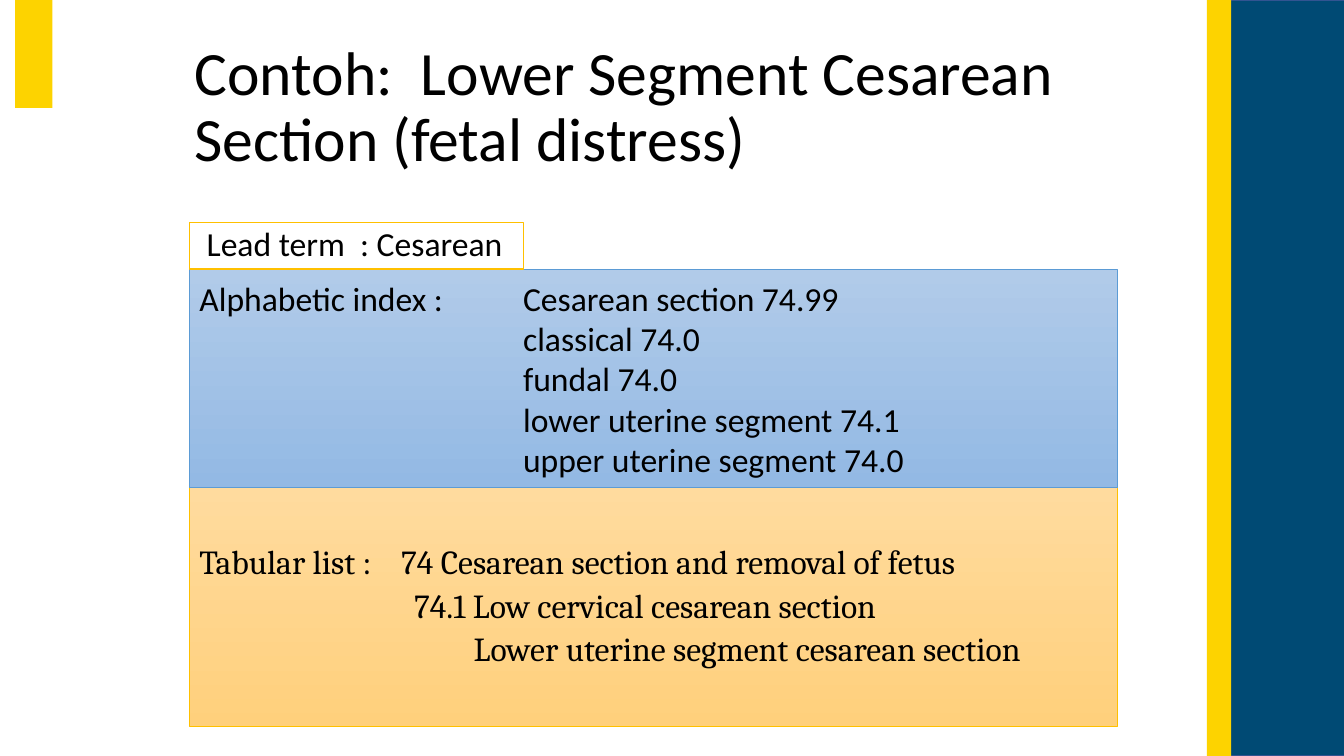
from dataclasses import dataclass
from typing import Optional

import pptx
import pptx.dml.color
import pptx.enum.shapes
import pptx.enum.text
import pptx.util

Inches = pptx.util.Inches
Pt = pptx.util.Pt
RGBColor = pptx.dml.color.RGBColor

YELLOW = RGBColor(0xFD, 0xD3, 0x00)
NAVY = RGBColor(0x00, 0x4A, 0x74)
NAVY_EDGE = RGBColor(0x32, 0x54, 0x91)
GOLD = RGBColor(0xFF, 0xC0, 0x00)
BLUE = RGBColor(0x5B, 0x9B, 0xD5)
ORANGE_TOP = RGBColor(0xFF, 0xDB, 0x9E)
ORANGE_BOTTOM = RGBColor(0xFF, 0xD0, 0x7C)
BLUE_TOP = RGBColor(0xB1, 0xCB, 0xE9)
BLUE_BOTTOM = RGBColor(0x93, 0xB9, 0xE4)
WHITE = RGBColor(0xFF, 0xFF, 0xFF)
BLACK = RGBColor(0x00, 0x00, 0x00)


@dataclass
class Box:
    left: float
    top: float
    width: float
    height: float
    fill: RGBColor
    fill_bottom: Optional[RGBColor] = None
    line: Optional[RGBColor] = None
    line_width: float = 1


@dataclass
class Line:
    text: str
    margin: float = 0
    indent: float = 0


def add_box(s, box: Box):
    sp = s.shapes.add_shape(
        pptx.enum.shapes.MSO_SHAPE.RECTANGLE, Inches(box.left),
        Inches(box.top), Inches(box.width), Inches(box.height))
    sp.shadow.inherit = False
    if box.fill_bottom is None:
        sp.fill.solid()
        sp.fill.fore_color.rgb = box.fill
    else:
        sp.fill.gradient()
        sp.fill.gradient_angle = 270
        for stop, color in zip(sp.fill.gradient_stops, (box.fill, box.fill_bottom)):
            stop.color.rgb = color
    if box.line is None:
        sp.line.fill.background()
    else:
        sp.line.color.rgb = box.line
        sp.line.width = Pt(box.line_width)
    return sp


def write(sp, lines: list[Line], *, size: float = 24, font: str = "Calibri",
          spacing: float = 1, before: float = 0, inset: float = 0.1) -> None:
    """Fill a shape with left-aligned, vertically centred lines."""
    tf = sp.text_frame
    tf.word_wrap = True
    tf.auto_size = pptx.enum.text.MSO_AUTO_SIZE.NONE
    tf.vertical_anchor = pptx.enum.text.MSO_ANCHOR.MIDDLE
    tf.margin_left = Inches(inset)
    for i, line in enumerate(lines):
        p = tf.add_paragraph() if i else tf.paragraphs[0]
        p.text = line.text
        p.alignment = pptx.enum.text.PP_ALIGN.LEFT
        p.line_spacing = spacing
        p.space_before = Pt(before if i else 0)
        pPr = p._p.get_or_add_pPr()
        pPr.set("marL", str(Inches(line.margin)))
        pPr.set("indent", str(Inches(line.indent)))
        for r in p.runs:
            r.font.size = Pt(size)
            r.font.name = font
            r.font.color.rgb = BLACK


def labelled(label: str, entries: list[tuple[str, float]]) -> list[Line]:
    """Hang the label to the left of the first entry."""
    (first, margin), *rest = entries
    return [Line(f"{label}\t{first}", margin, -margin),
            *(Line(text, indent) for text, indent in rest)]


BARS = [
    Box(0.15, -0.03, 0.37, 1.1, YELLOW),
    Box(12.18, 0, 1.21, 7.5, NAVY, line=NAVY_EDGE),
    Box(11.97, -0.01, 0.24, 7.53, YELLOW),
]
TABULAR_BOX = Box(1.88, 4.84, 9.2, 2.37, ORANGE_TOP, ORANGE_BOTTOM, GOLD, 0.5)
INDEX_BOX = Box(1.88, 2.67, 9.2, 2.17, BLUE_TOP, BLUE_BOTTOM, BLUE, 0.5)
LEAD_BOX = Box(1.88, 2.21, 3.31, 0.46, WHITE, line=GOLD)

INDEX_ENTRIES = ["Cesarean section 74.99", "classical 74.0", "fundal 74.0",
                 "lower uterine segment 74.1", "upper uterine segment 74.0"]
TABULAR_ENTRIES = [("74 Cesarean section and removal of fetus", 2.0),
                   ("74.1 Low cervical cesarean section", 2.13),
                   ("Lower uterine segment cesarean section", 2.72)]


def main() -> None:
    prs = pptx.Presentation()
    prs.slide_width, prs.slide_height = Inches(13.33), Inches(7.5)
    s = prs.slides.add_slide(prs.slide_layouts[5])

    title = s.shapes.title
    title.left, title.top = Inches(1.83), Inches(0.35)
    title.width, title.height = Inches(11.5), Inches(1.45)
    write(title, [Line("Contoh:  Lower Segment Cesarean\vSection (fetal distress)")],
          size=44, spacing=0.9)

    for bar in BARS:
        add_box(s, bar)
    write(add_box(s, TABULAR_BOX), labelled("Tabular list :", TABULAR_ENTRIES),
          font="Cambria", spacing=0.9, before=5)
    write(add_box(s, INDEX_BOX),
          labelled("Alphabetic index :", [(entry, 3.21) for entry in INDEX_ENTRIES]))
    write(add_box(s, LEAD_BOX), [Line("Lead term  : Cesarean")], spacing=0.9, inset=0.17)

    prs.save("out.pptx")


if __name__ == "__main__":
    main()
